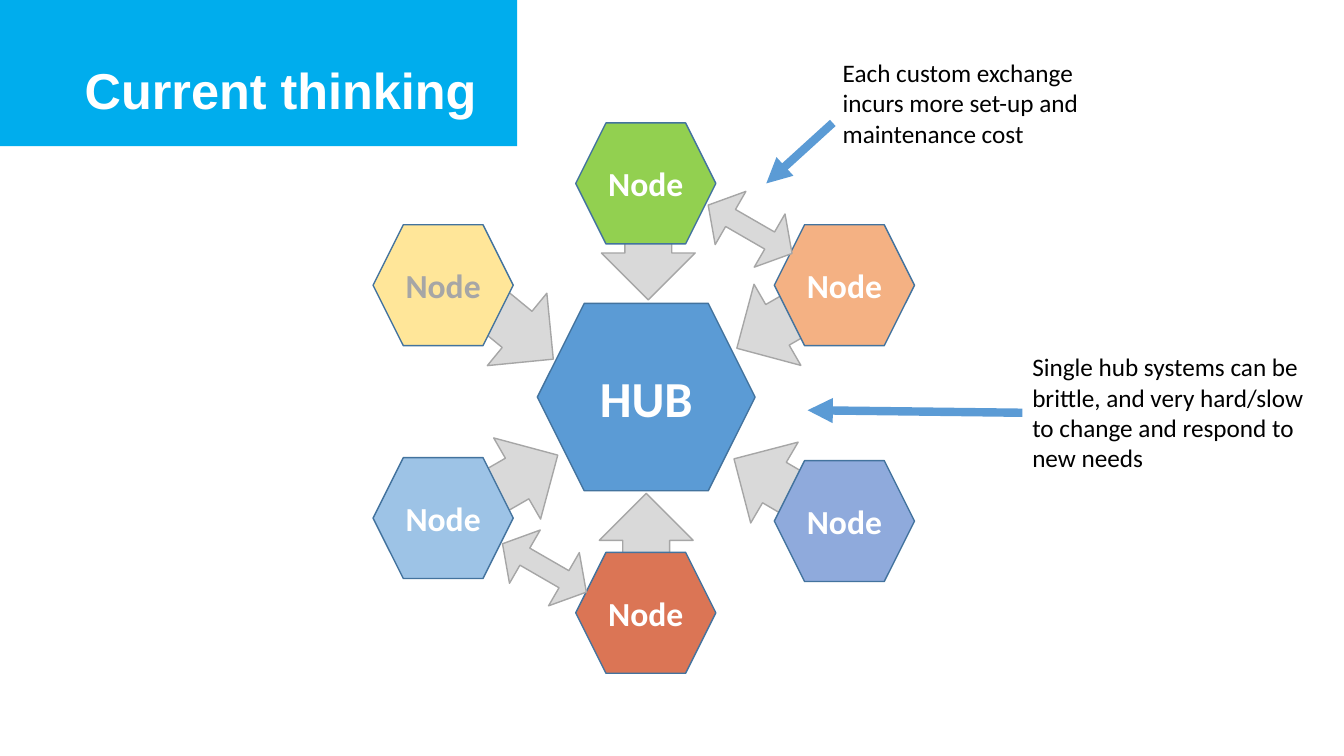
from typing import NamedTuple

from lxml import etree
from pptx import Presentation
from pptx.dml.color import RGBColor
from pptx.enum.shapes import MSO_CONNECTOR, MSO_SHAPE
from pptx.enum.text import MSO_ANCHOR, MSO_AUTO_SIZE, PP_ALIGN
from pptx.oxml.ns import qn
from pptx.util import Emu, Pt

PX = 9144  # 100 px to the inch
HEXAGON = MSO_SHAPE.HEXAGON
ARROW = MSO_SHAPE.RIGHT_ARROW
TWO_WAY = MSO_SHAPE.LEFT_RIGHT_ARROW
STRAIGHT = MSO_CONNECTOR.STRAIGHT
TOP, MIDDLE = MSO_ANCHOR.TOP, MSO_ANCHOR.MIDDLE
LEFT, CENTER = PP_ALIGN.LEFT, PP_ALIGN.CENTER
NO_FIT = MSO_AUTO_SIZE.NONE

WHITE, BLACK = "FFFFFF", "000000"
BLUE, NAVY, CYAN = "5B9BD5", "43739E", "00ADED"
SILVER, GREY = "D9D9D9", "A6A6A6"
TITLE_ONLY = 5


class Node(NamedTuple):
    x: int
    y: int
    fill: str
    ink: str = WHITE


class Arrow(NamedTuple):
    x: int
    y: int
    turn: float


class Note(NamedTuple):
    text: str
    x: int
    y: int
    h: int
    start: tuple[int, int]
    end: tuple[int, int]
    join: bool


NODE_W, NODE_H = 139, 120
NODES = [
    Node(571, 548, "DB7555"),
    Node(571, 122, "92D050"),
    Node(370, 223, "FFE699", GREY),
    Node(370, 454, "9DC3E6"),
    Node(768, 223, "F4B183"),
    Node(768, 457, "8FAADC"),
]
SPOKES = [
    Arrow(585, 193, 90),
    Arrow(583, 501, 270),
    Arrow(445, 434, 330),
    Arrow(723, 270, 150),
    Arrow(446, 273, 39.4),
    Arrow(720, 438, 210.4),
]
LINKS = [Arrow(696, 197, 30), Arrow(492, 533, 30)]
NOTES = [
    Note("Each custom exchange incurs more set-up and maintenance cost",
         826, 52, 101, (826, 122), (760, 182), False),
    Note("Single hub systems can be brittle, and very hard/slow to change "
         "and respond to new needs",
         1014, 344, 131, (1014, 410), (801, 407), True),
]


def px(*vals: int) -> list[Emu]:
    return [Emu(v * PX) for v in vals]


def rgb(code: str) -> RGBColor:
    return RGBColor.from_string(code)


def write(shape, text: str, *, size: int, ink: str = WHITE, font: str = "Calibri",
          bold: bool = False, align=LEFT, anchor=TOP) -> None:
    frame = shape.text_frame
    frame.word_wrap = True
    frame.auto_size = NO_FIT
    frame.vertical_anchor = anchor
    para = frame.paragraphs[0]
    para.alignment = align
    run = para.add_run()
    run.text = text
    run.font.name = font
    run.font.size = Pt(size)
    run.font.bold = bold
    run.font.color.rgb = rgb(ink)


def draw(slide, kind, x: int, y: int, w: int, h: int, fill: str, line: str,
         turn: float = 0):
    shape = slide.shapes.add_shape(kind, *px(x, y, w, h))
    shape.shadow.inherit = False
    shape.fill.solid()
    shape.fill.fore_color.rgb = rgb(fill)
    shape.line.color.rgb = rgb(line)
    shape.line.width = Pt(1)
    shape.rotation = turn
    return shape


def add_title(slide) -> None:
    title = slide.shapes.title
    title.left, title.top, title.width, title.height = px(0, 0, 513, 145)
    title.fill.solid()
    title.fill.fore_color.rgb = rgb(CYAN)
    frame = title.text_frame
    frame.margin_left, frame.margin_top, frame.margin_right = px(84, 59, 0)
    write(title, "Current thinking", size=36, font="Arial", bold=True)


def add_note(slide, note: Note) -> None:
    """Place a remark and the pointer that leads from it to the diagram."""
    box = slide.shapes.add_textbox(*px(note.x, note.y, 304, note.h))
    write(box, note.text, size=18, ink=BLACK)
    line = slide.shapes.add_connector(STRAIGHT, *px(*note.start, *note.end))
    if note.join:
        line.begin_connect(box, 1)
    line.line.color.rgb = rgb(BLUE)
    line.line.width = Pt(6)
    etree.SubElement(line.line._get_or_add_ln(), qn("a:tailEnd"), type="triangle")
    etree.SubElement(line._element.spPr, qn("a:effectLst"))


def main() -> None:
    deck = Presentation()
    deck.slide_width, deck.slide_height = px(1333, 750)
    slide = deck.slides.add_slide(deck.slide_layouts[TITLE_ONLY])
    add_title(slide)
    hub = draw(slide, HEXAGON, 533, 301, 216, 186, BLUE, NAVY)
    write(hub, "HUB", size=36, bold=True, align=CENTER, anchor=MIDDLE)
    for x, y, turn in SPOKES:
        draw(slide, ARROW, x, y, 116, 93, SILVER, GREY, turn)
    for x, y, fill, ink in NODES:
        node = draw(slide, HEXAGON, x, y, NODE_W, NODE_H, fill, NAVY)
        write(node, "Node", size=24, ink=ink, bold=True, align=CENTER, anchor=MIDDLE)
    for x, y, turn in LINKS:
        link = draw(slide, TWO_WAY, x, y, 96, 61, SILVER, GREY, turn)
        link.adjustments[0], link.adjustments[1] = 0.32, 0.42
    for note in NOTES:
        add_note(slide, note)
    deck.save("out.pptx")


if __name__ == "__main__":
    main()
